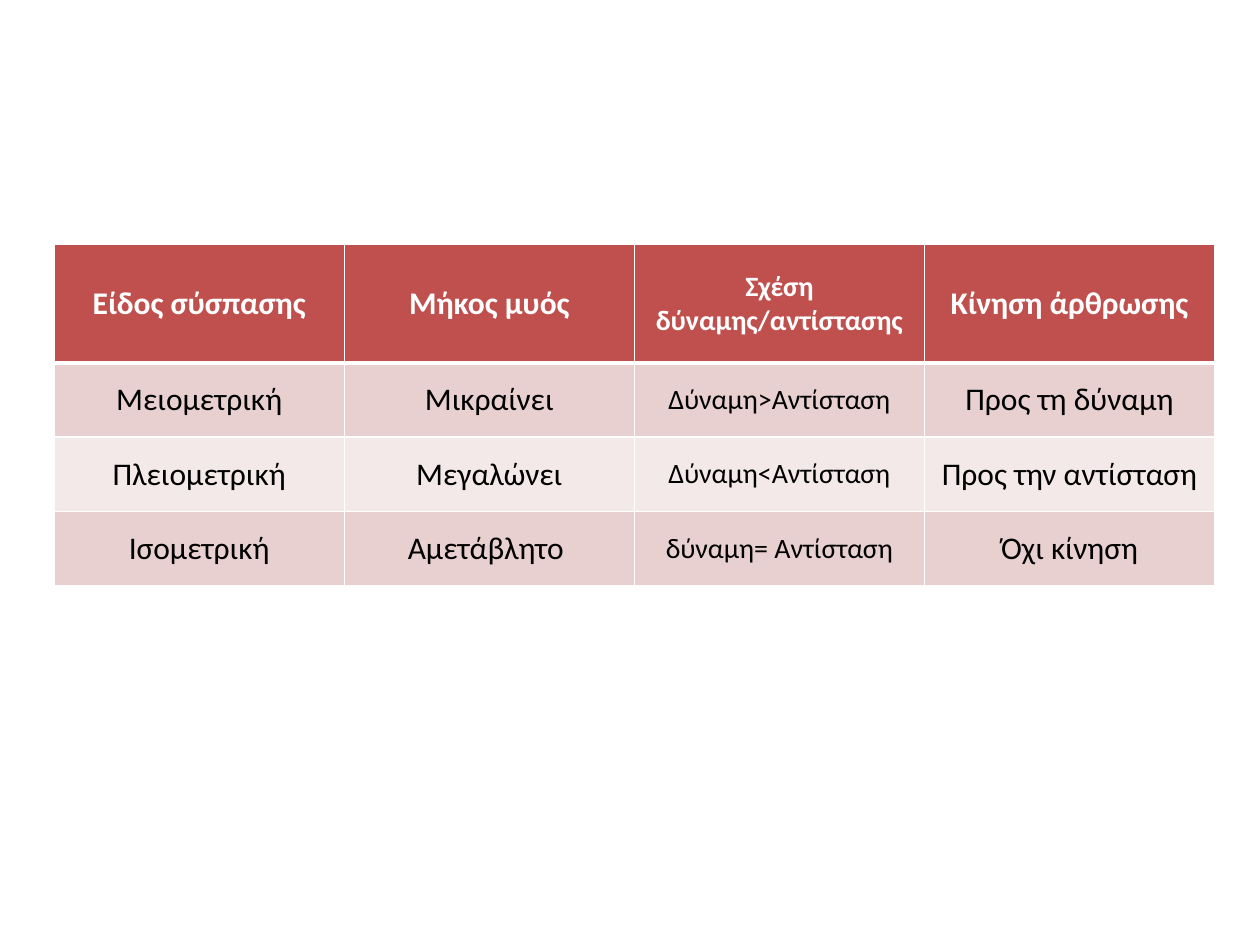
from lxml.etree import SubElement
from pptx import Presentation
from pptx.dml.color import RGBColor
from pptx.enum.text import MSO_ANCHOR, PP_ALIGN
from pptx.oxml.ns import qn
from pptx.util import Inches, Pt

COLORS = {
    "header": "C0504D",
    "band_dark": "E8D0D0",
    "band_light": "F4E9E9",
    "white": "FFFFFF",
    "black": "000000",
}

CONTRACTIONS = [
    ["Είδος σύσπασης", "Μήκος μυός", "Σχέση δύναμης/αντίστασης", "Κίνηση άρθρωσης"],
    ["Μειομετρική", "Μικραίνει", "Δύναμη>Αντίσταση", "Προς τη δύναμη"],
    ["Πλειομετρική", "Μεγαλώνει", "Δύναμη<Αντίσταση", "Προς την αντίσταση"],
    ["Ισομετρική", "Αμετάβλητο ", "δύναμη= Αντίσταση", "Όχι κίνηση"],
]
COLUMN_SIZES = [18, 18, 16, 18]
ROW_HEIGHTS = [0.94, 0.59, 0.59, 0.59]


class SlideBuilder:
    font = "Calibri"

    def __init__(self, slide):
        self.slide = slide

    def border(self, cell, side, width):
        ln = SubElement(cell._tc.get_or_add_tcPr(), qn(f"a:ln{side}"), w=str(Pt(width)))
        fill = SubElement(ln, qn("a:solidFill"))
        SubElement(fill, qn("a:srgbClr"), val=COLORS["white"])

    def cell(self, cell, text, size, fill, color, bold, widths):
        for side, width in widths.items():
            self.border(cell, side, width)
        cell.fill.solid()
        cell.fill.fore_color.rgb = RGBColor.from_string(COLORS[fill])
        cell.vertical_anchor = MSO_ANCHOR.MIDDLE
        p = cell.text_frame.paragraphs[0]
        p.text = text
        p.alignment = PP_ALIGN.CENTER
        font = p.runs[0].font
        font.name = self.font
        font.size = Pt(size)
        font.bold = bold
        font.color.rgb = RGBColor.from_string(COLORS[color])

    def table(self, left, top, width, rows, heights, sizes):
        table = self.slide.shapes.add_table(
            len(rows), len(sizes), Inches(left), Inches(top),
            Inches(width), Inches(sum(heights)),
        ).table
        for i, (row, height) in enumerate(zip(rows, heights)):
            table.rows[i].height = Inches(height)
            header = i == 0
            band = "band_dark" if i % 2 else "band_light"
            widths = {"L": 1, "R": 1, "T": 3 if i == 1 else 1, "B": 3 if header else 1}
            for j, (text, size) in enumerate(zip(row, sizes)):
                self.cell(
                    table.cell(i, j), text, size,
                    "header" if header else band,
                    "white" if header else "black", header, widths,
                )


def main():
    prs = Presentation()
    prs.slide_width, prs.slide_height = Inches(10), Inches(7.5)
    s = SlideBuilder(prs.slides.add_slide(prs.slide_layouts[6]))
    s.table(0.43, 1.94, 9.21, CONTRACTIONS, ROW_HEIGHTS, COLUMN_SIZES)
    prs.save("out.pptx")


if __name__ == "__main__":
    main()
